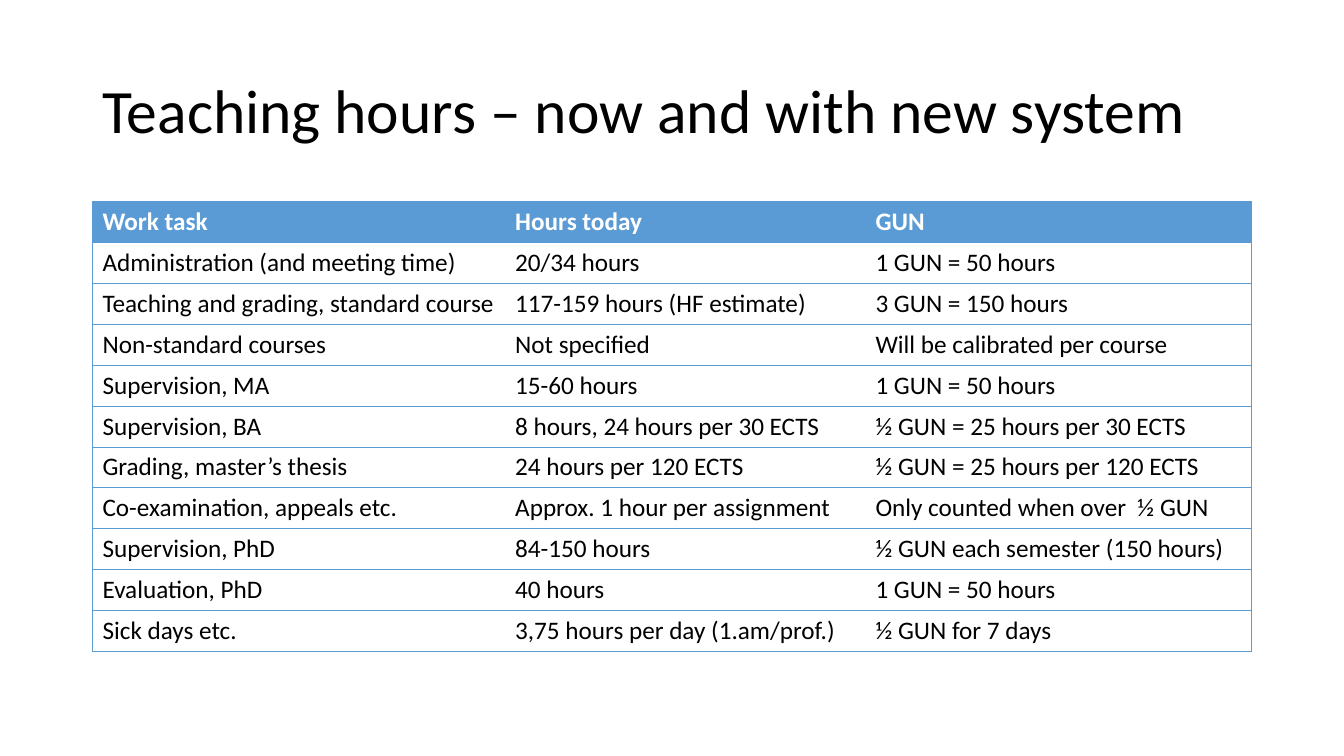
from dataclasses import dataclass

import pptx
import pptx.dml.color
import pptx.enum.text
import pptx.oxml.ns
import pptx.util
from lxml import etree
from pptx.util import Cm


@dataclass(frozen=True)
class Theme:
    font: str = "Calibri"
    ink: str = "000000"
    paper: str = "FFFFFF"
    accent: str = "5B9BD5"
    title_size: int = 44
    table_size: int = 18
    rule_width: float = 0.5


THEME = Theme()
LEFT = 2.33
COLUMN_WIDTHS = (10.4, 9.08, 9.73)
ROW_HEIGHT = 1.03
TITLE = "Teaching hours – now and with new system"
WORKLOAD = (
    ("Work task", "Hours today", "GUN"),
    ("Administration (and meeting time)", "20/34 hours", "1 GUN = 50 hours"),
    ("Teaching and grading, standard course", "117-159 hours (HF estimate)", "3 GUN = 150 hours"),
    ("Non-standard courses", "Not specified", "Will be calibrated per course"),
    ("Supervision, MA", "15-60 hours", "1 GUN = 50 hours"),
    ("Supervision, BA", "8 hours, 24 hours per 30 ECTS", "½ GUN = 25 hours per 30 ECTS"),
    ("Grading, master’s thesis", "24 hours per 120 ECTS", "½ GUN = 25 hours per 120 ECTS"),
    ("Co-examination, appeals etc.", "Approx. 1 hour per assignment", "Only counted when over  ½ GUN"),
    ("Supervision, PhD", "84-150 hours", "½ GUN each semester (150 hours)"),
    ("Evaluation, PhD", "40 hours", "1 GUN = 50 hours"),
    ("Sick days etc.", "3,75 hours per day (1.am/prof.)", "½ GUN for 7 days"),
)


def rgb(value):
    return pptx.dml.color.RGBColor.from_string(value)


def style_font(paragraph, size, color, bold=False):
    font = paragraph.font
    font.name = THEME.font
    font.size = pptx.util.Pt(size)
    font.bold = bold
    font.color.rgb = rgb(color)


def add_title(slide, text):
    title = slide.shapes.add_textbox(Cm(LEFT), Cm(1.01), Cm(sum(COLUMN_WIDTHS)), Cm(3.68))
    frame = title.text_frame
    frame.word_wrap = True
    frame.vertical_anchor = pptx.enum.text.MSO_ANCHOR.MIDDLE
    heading = frame.paragraphs[0]
    heading.text = text
    heading.line_spacing = 0.9
    style_font(heading, THEME.title_size, THEME.ink)


def set_borders(cell, visible_sides):
    qn = pptx.oxml.ns.qn
    properties = cell._tc.get_or_add_tcPr()
    for position, side in enumerate("LRTB"):
        border = etree.Element(qn(f"a:ln{side}"), w=str(pptx.util.Pt(THEME.rule_width)))
        if side in visible_sides:
            fill = etree.SubElement(border, qn("a:solidFill"))
            etree.SubElement(fill, qn("a:srgbClr"), val=THEME.accent)
        else:
            etree.SubElement(border, qn("a:noFill"))
        properties.insert(position, border)


def fill_cell(cell, text, is_header, visible_sides):
    cell.fill.solid()
    cell.fill.fore_color.rgb = rgb(THEME.accent if is_header else THEME.paper)
    entry = cell.text_frame.paragraphs[0]
    entry.text = text
    style_font(entry, THEME.table_size, THEME.paper if is_header else THEME.ink, is_header)
    set_borders(cell, visible_sides)


def add_workload_table(slide, rows):
    frame = slide.shapes.add_table(
        len(rows), len(COLUMN_WIDTHS), Cm(LEFT), Cm(5.08),
        Cm(sum(COLUMN_WIDTHS)), Cm(ROW_HEIGHT * len(rows)),
    )
    workload = frame.table
    workload.horz_banding = False
    for column, width in zip(workload.columns, COLUMN_WIDTHS):
        column.width = Cm(width)
    outer_sides = {0: "L", len(COLUMN_WIDTHS) - 1: "R"}
    for row_index, entries in enumerate(rows):
        workload.rows[row_index].height = Cm(ROW_HEIGHT)
        for column_index, text in enumerate(entries):
            sides = "TB" + outer_sides.get(column_index, "")
            fill_cell(workload.cell(row_index, column_index), text, row_index == 0, sides)


def main():
    presentation = pptx.Presentation()
    presentation.slide_width = Cm(33.87)
    presentation.slide_height = Cm(19.05)
    slide = presentation.slides.add_slide(presentation.slide_layouts[6])
    add_title(slide, TITLE)
    add_workload_table(slide, WORKLOAD)
    presentation.save("out.pptx")


if __name__ == "__main__":
    main()
